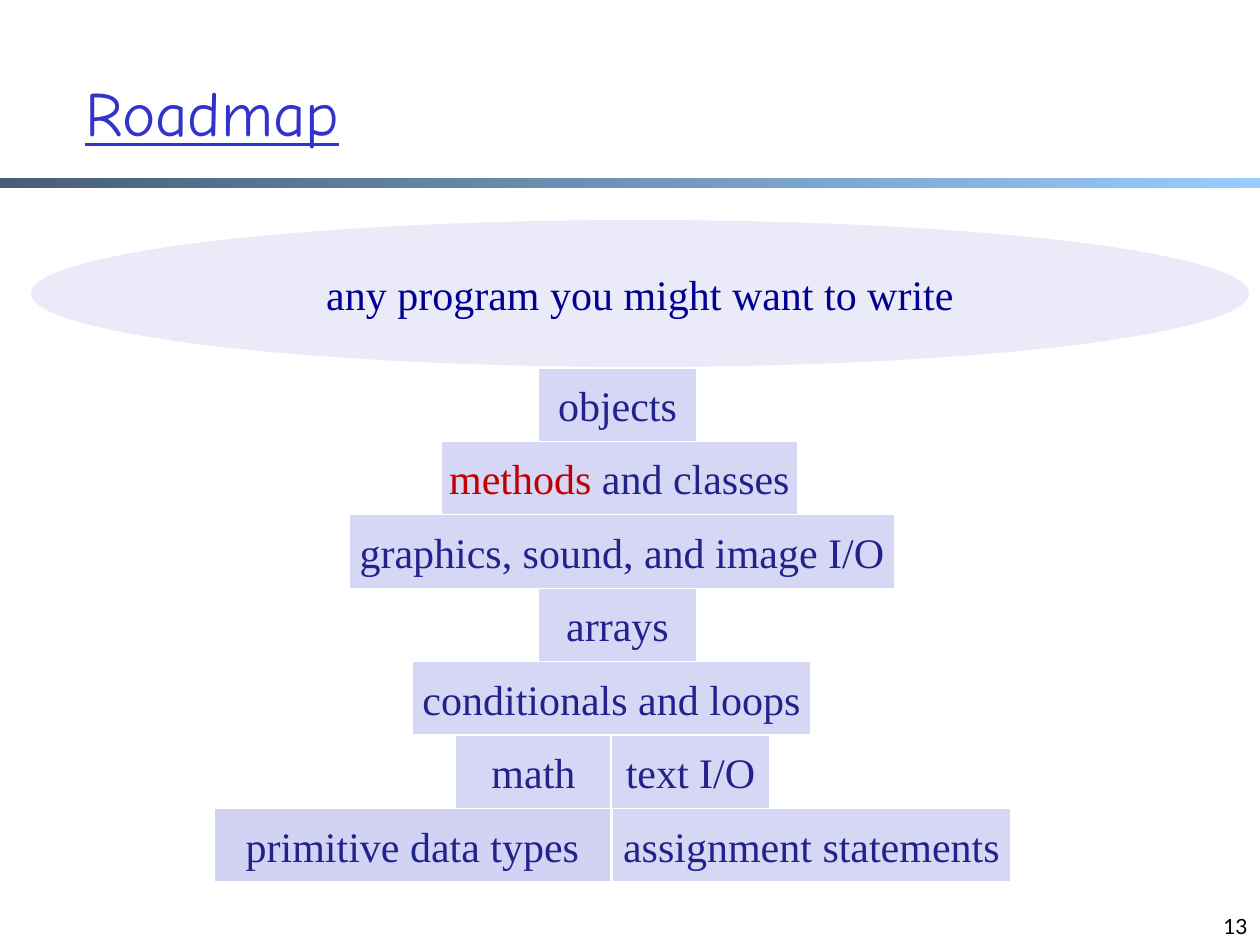
from lxml.etree import SubElement
from pptx import Presentation
from pptx.dml.color import RGBColor
from pptx.enum.shapes import MSO_SHAPE
from pptx.enum.text import MSO_ANCHOR, PP_ALIGN
from pptx.oxml.ns import qn
from pptx.util import Pt

EMU_PER_PX = 914400 / 126
COLORS = {
    "title": "3333CC",
    "bar_start": "475E76",
    "bar_end": "99CCFF",
    "block": "D6D6F5",
    "base_block": "D2D2F4",
    "block_text": "22228B",
    "highlight": "C00000",
    "goal_text": "000090",
    "white": "FFFFFF",
    "black": "000000",
}
BODY = {"name": "Times New Roman", "size": Pt(24)}
TITLE = {"name": "Comic Neue", "size": Pt(36), "underline": True}
NUMBER = {"name": "Lato", "size": Pt(12)}

# Rows from top to bottom; each block is (left, width, fill, runs)
ROWS = [
    [(538, 159, "block", [("objects", "block_text")])],
    [(441, 357, "block", [("methods", "highlight"), (" and classes", "block_text")])],
    [(349, 546, "block", [("graphics, sound, and image I/O", "block_text")])],
    [(538, 159, "block", [("arrays", "block_text")])],
    [(412, 399, "block", [("conditionals and loops", "block_text")])],
    [(455, 157, "block", [("math", "block_text")]),
     (611, 159, "block", [("text I/O", "block_text")])],
    [(612, 399, "block", [("assignment statements", "block_text")]),
     (214, 397, "base_block", [("primitive data types", "block_text")])],
]
ROWS_TOP, ROWS_HEIGHT = 368, 514


def px(length):
    return round(length * EMU_PER_PX)


def color(name):
    return RGBColor.from_string(COLORS[name])


def write_text(shape, runs, font, align, anchor, wrap):
    frame = shape.text_frame
    frame.word_wrap = wrap
    frame.vertical_anchor = anchor
    paragraph = frame.paragraphs[0]
    paragraph.alignment = align
    for text, color_name in runs:
        run = paragraph.add_run()
        run.text = text
        for attribute, value in font.items():
            setattr(run.font, attribute, value)
        run.font.color.rgb = color(color_name)


def add_label(slide, box, runs, font, align, anchor):
    label = slide.shapes.add_textbox(*map(px, box))
    write_text(label, runs, font, align, anchor, True)


def add_plain_shape(slide, kind, box):
    shape = slide.shapes.add_shape(kind, *map(px, box))
    shape.shadow.inherit = False
    shape.line.fill.background()
    return shape


def add_gradient_bar(slide, box):
    bar = add_plain_shape(slide, MSO_SHAPE.RECTANGLE, box)
    bar.fill.gradient()
    bar.fill.gradient_angle = 0
    for stop, name in zip(bar.fill.gradient_stops, ("bar_start", "bar_end")):
        stop.color.rgb = color(name)


def add_block(slide, box, fill, runs):
    block = add_plain_shape(slide, MSO_SHAPE.RECTANGLE, box)
    block.fill.solid()
    block.fill.fore_color.rgb = color(fill)
    block.line.color.rgb = color("white")
    block.line.width = Pt(0.75)
    write_text(block, runs, BODY, PP_ALIGN.CENTER, MSO_ANCHOR.MIDDLE, False)


def add_goal(slide, box, runs):
    goal = add_plain_shape(slide, MSO_SHAPE.OVAL, box)
    goal.fill.solid()
    goal.fill.fore_color.rgb = color("block")
    # Half transparent fill
    fill_color = goal.fill._xPr.find(qn("a:solidFill"))[0]
    SubElement(fill_color, qn("a:alpha"), val="50000")
    write_text(goal, runs, BODY, PP_ALIGN.CENTER, MSO_ANCHOR.MIDDLE, False)


def main():
    presentation = Presentation()
    presentation.slide_width, presentation.slide_height = px(1260), px(945)
    slide = presentation.slides.add_slide(presentation.slide_layouts[6])

    # Heading and page number
    add_gradient_bar(slide, (0, 178, 1260, 10))
    add_label(slide, (73, 32, 1071, 158), [("Roadmap", "title")], TITLE,
              PP_ALIGN.LEFT, MSO_ANCHOR.MIDDLE)
    add_label(slide, (966, 882, 294, 63), [("13", "black")], NUMBER,
              PP_ALIGN.RIGHT, MSO_ANCHOR.BOTTOM)

    # Tower of topics
    pitch = ROWS_HEIGHT / len(ROWS)
    for index, row in enumerate(ROWS):
        top = ROWS_TOP + index * pitch
        for left, width, fill, runs in row:
            add_block(slide, (left, top, width, pitch), fill, runs)

    # Goal on top of the tower
    add_goal(slide, (31, 220, 1218, 147),
             [("any program you might want to write", "goal_text")])

    presentation.save("out.pptx")


if __name__ == "__main__":
    main()
